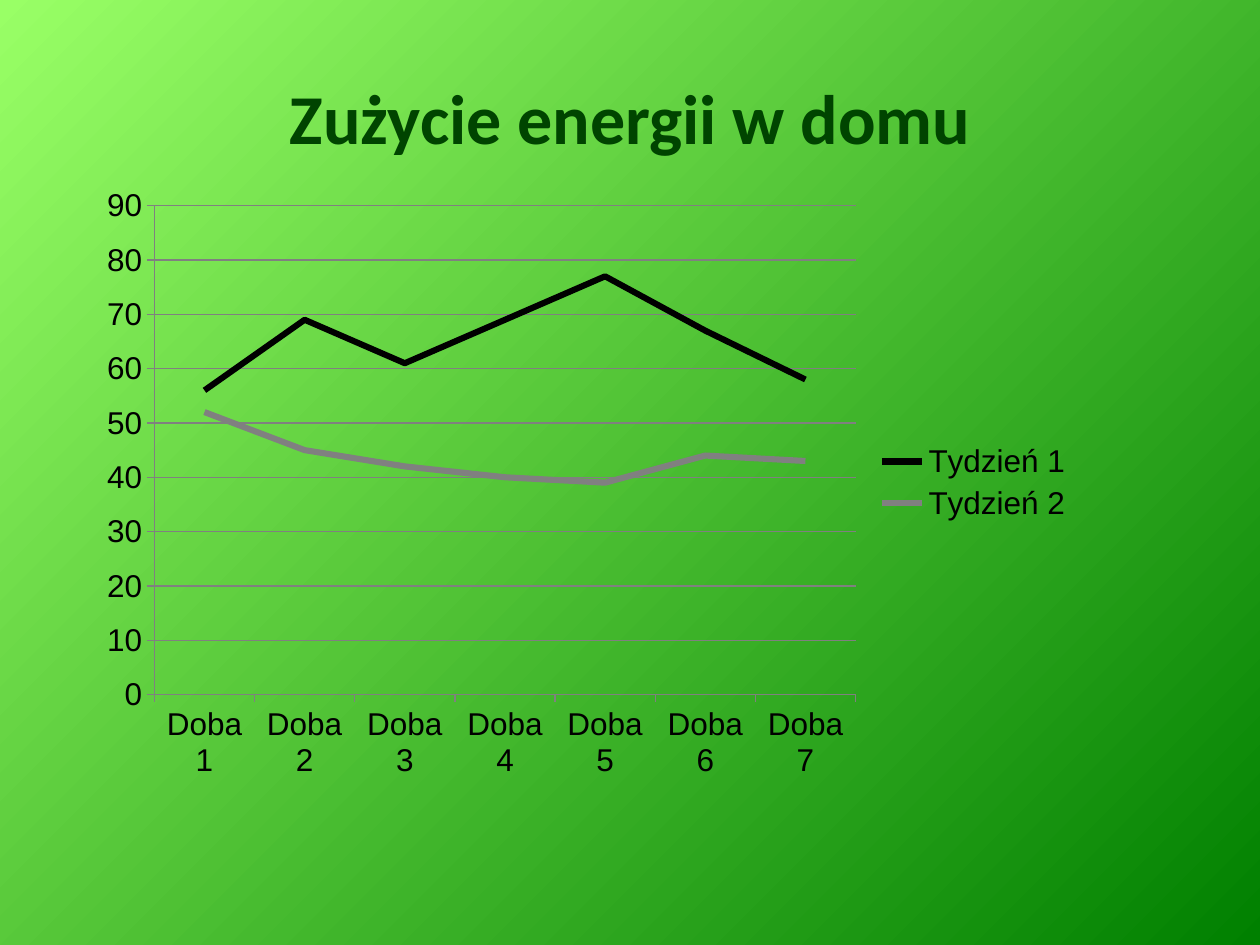
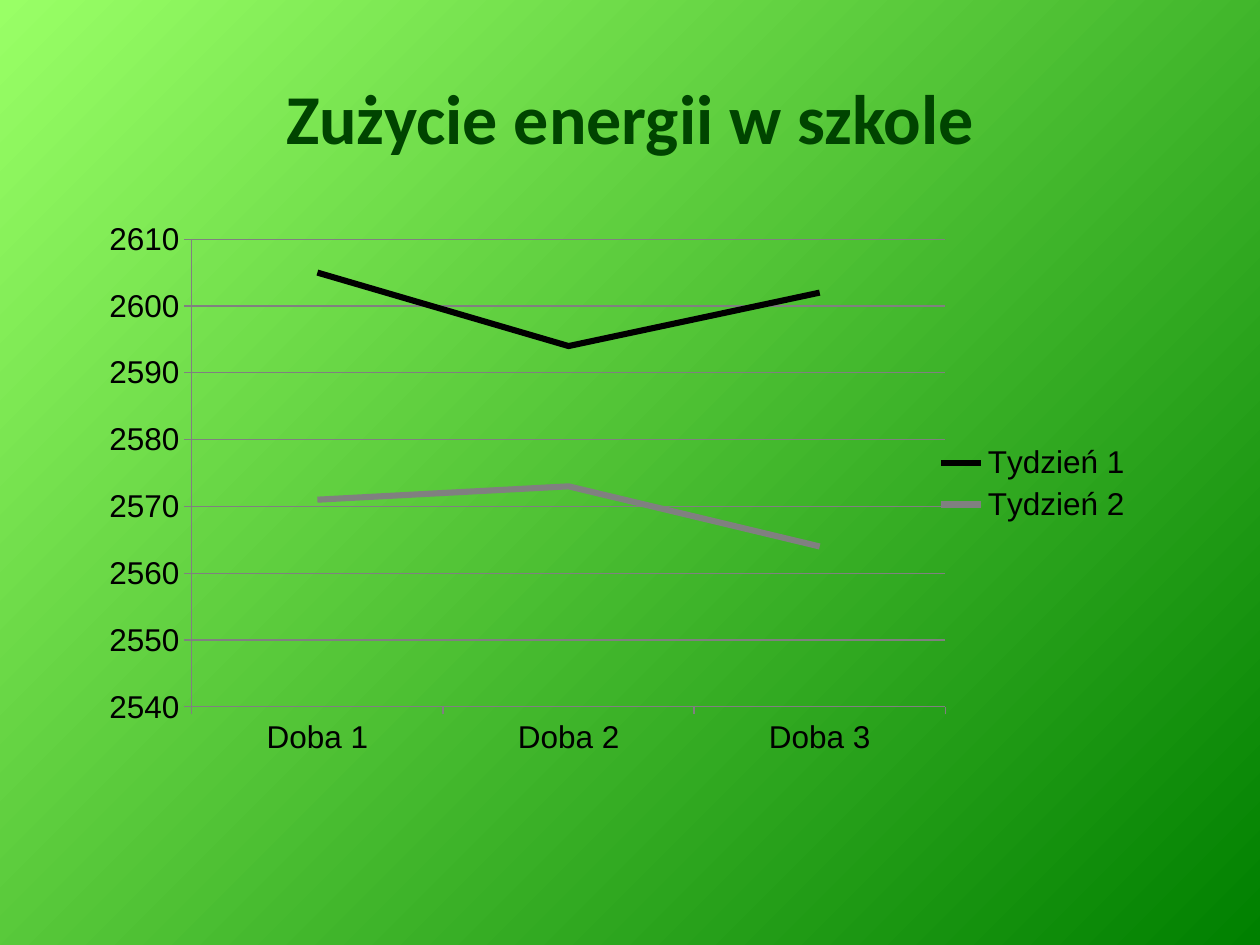
from lxml import etree
from pptx import Presentation
from pptx.chart.data import CategoryChartData
from pptx.dml.color import RGBColor
from pptx.enum.chart import XL_CHART_TYPE, XL_LEGEND_POSITION, XL_MARKER_STYLE, XL_TICK_MARK
from pptx.enum.text import MSO_ANCHOR, MSO_AUTO_SIZE, PP_ALIGN
from pptx.oxml.ns import qn
from pptx.util import Pt

LINE_CHART = XL_CHART_TYPE.LINE
LEGEND_RIGHT = XL_LEGEND_POSITION.RIGHT
NO_MARKER = XL_MARKER_STYLE.NONE
TICK_OUTSIDE = XL_TICK_MARK.OUTSIDE
MIDDLE = MSO_ANCHOR.MIDDLE
NO_AUTOFIT = MSO_AUTO_SIZE.NONE
CENTER = PP_ALIGN.CENTER

DARK_GREEN = RGBColor(0x00, 0x80, 0x00)
LIGHT_GREEN = RGBColor(0x99, 0xFF, 0x66)
TITLE_GREEN = RGBColor(0x00, 0x44, 0x00)
BLACK = RGBColor(0x00, 0x00, 0x00)
GREY = RGBColor(0x80, 0x80, 0x80)
SERIES_COLORS = (BLACK, GREY)

TITLE_FONT = "Calibri"
CHART_FONT = "Arial"
TITLE_BOX = (36, 10, 648, 113)
TITLE_ONLY = 5

CHARTS = (
    {
        "title": "Zużycie energii w domu",
        "box": (48.2, 100, 572.4, 351.4),
        "plot": (0.07, 0.05, 0.7, 0.795),
        "scale": (0, 90),
        "weeks": ((56, 69, 61, 69, 77, 67, 58), (52, 45, 42, 40, 39, 44, 43)),
    },
    {
        "title": "Zużycie energii w szkole",
        "box": (36.7, 116.6, 617.8, 319.7),
        "plot": (0.118, 0.063, 0.697, 0.836),
        "scale": (2540, 2610),
        "weeks": ((2605, 2594, 2602), (2571, 2573, 2564)),
    },
)


def style_background(master):
    """Give every slide the diagonal green gradient."""
    fill = master.background.fill
    fill.gradient()
    fill.gradient_angle = 135
    for stop, color in zip(fill.gradient_stops, (DARK_GREEN, LIGHT_GREEN)):
        stop.color.rgb = color


def style_title(title, text, box):
    """Place and format the title placeholder in the given box."""
    title.left, title.top, title.width, title.height = map(Pt, box)
    frame = title.text_frame
    frame.text = text
    frame.auto_size = NO_AUTOFIT
    frame.vertical_anchor = MIDDLE
    paragraph = frame.paragraphs[0]
    paragraph.alignment = CENTER
    font = paragraph.runs[0].font
    font.name, font.size, font.bold = TITLE_FONT, Pt(40), True
    font.color.rgb = TITLE_GREEN


def style_line(line, color, width):
    """Set the colour and width of a line."""
    line.color.rgb = color
    line.width = Pt(width)


def place_plot(chart, plot):
    """Fix the inner plot area as fractions of the chart box."""
    area = chart.plots[0]._element.getparent()
    for old in area.findall(qn("c:layout")):
        area.remove(old)
    layout = etree.Element(qn("c:layout"))
    area.insert(0, layout)
    manual = etree.SubElement(layout, qn("c:manualLayout"))
    settings = [("layoutTarget", "inner"), ("xMode", "edge"), ("yMode", "edge")]
    settings += zip("xywh", plot)
    for name, value in settings:
        etree.SubElement(manual, qn(f"c:{name}")).set("val", str(value))


def add_energy_chart(slide, box, plot, scale, weeks):
    """Draw one line per week in the given box."""
    data = CategoryChartData()
    data.categories = [f"Doba {day}" for day in range(1, len(weeks[0]) + 1)]
    for number, values in enumerate(weeks, 1):
        data.add_series(f"Tydzień {number}", values)
    chart = slide.shapes.add_chart(LINE_CHART, *map(Pt, box), data).chart
    chart.has_title = False
    chart.font.name, chart.font.size = CHART_FONT, Pt(18)
    chart.font.color.rgb = BLACK
    chart.has_legend = True
    chart.legend.position = LEGEND_RIGHT
    chart.legend.include_in_layout = False
    place_plot(chart, plot)

    for axis in (chart.category_axis, chart.value_axis):
        axis.major_tick_mark = TICK_OUTSIDE
        style_line(axis.format.line, GREY, 0.75)
    value_axis = chart.value_axis
    value_axis.minimum_scale, value_axis.maximum_scale = scale
    value_axis.major_unit = 10
    value_axis.has_major_gridlines = True
    style_line(value_axis.major_gridlines.format.line, GREY, 0.75)

    chart.plots[0].vary_by_categories = False
    for series, color in zip(chart.plots[0].series, SERIES_COLORS):
        series.smooth = False
        series.marker.style = NO_MARKER
        style_line(series.format.line, color, 3.5)


def add_chart_slide(presentation, title, **chart):
    """Add a slide with a title and an energy chart."""
    slide = presentation.slides.add_slide(presentation.slide_layouts[TITLE_ONLY])
    style_title(slide.shapes.title, title, TITLE_BOX)
    add_energy_chart(slide, **chart)


def main():
    """Build and save the presentation."""
    presentation = Presentation()
    presentation.slide_width, presentation.slide_height = Pt(720), Pt(540)
    style_background(presentation.slide_master)
    for chart in CHARTS:
        add_chart_slide(presentation, **chart)
    presentation.save("out.pptx")


if __name__ == "__main__":
    main()
